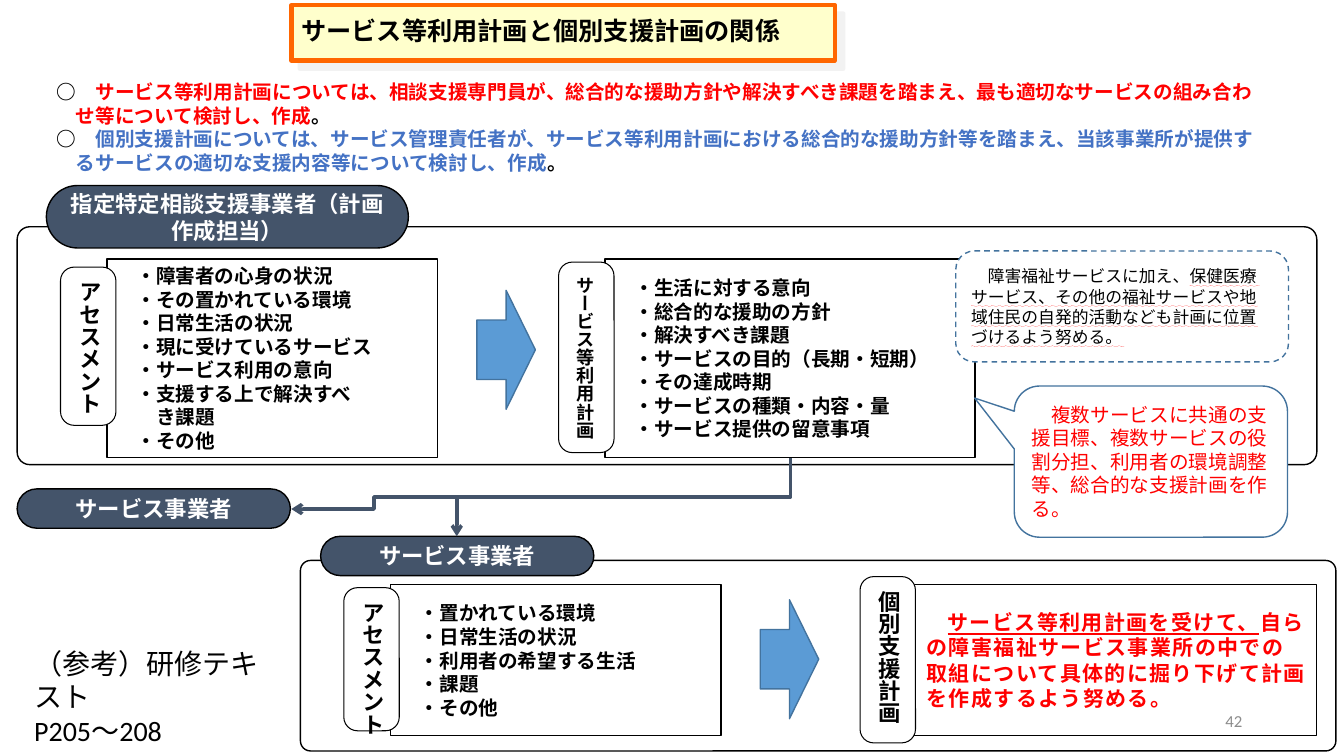
from pptx import Presentation, util as u
from pptx.dml.color import RGBColor
from pptx.enum import shapes, text, dml
from pptx.oxml import parse_xml, ns

# Theme
INK = dict(black="000000", white="FFFFFF", red="FF0000", blue="4472C4",
           navy="44546A", sky="5B9BD5", edge="43739E", cream="FFFFCC",
           orange="FF6600", gray="8C8C8C", shade="E7E6E6")
SIZE = dict(title=18, head=16, tab=16, slim=13, list=14, goal=15, memo=12, ref=20)
BODY, TOP, SIDE = "Calibri", "Arial", "Noto Sans CJK JP"
EM = SIZE["list"] / 72

# Content
TITLE = "サービス等利用計画と個別支援計画の関係"
INTRO = [
    ("サービス等利用計画については、相談支援専門員が、総合的な援助方針や解決すべき課題を踏まえ、"
     "最も適切なサービスの組み合わせ等について検討し、作成", "red"),
    ("個別支援計画については、サービス管理責任者が、サービス等利用計画における総合的な援助方針等を踏まえ、"
     "当該事業所が提供するサービスの適切な支援内容等について検討し、作成", "blue"),
]
NEEDS = ["・障害者の心身の状況", "・その置かれている環境", "・日常生活の状況", "・現に受けているサービス",
         "・サービス利用の意向", "・支援する上で解決すべ", "き課題", "・その他"]
PLAN = ["・生活に対する意向", "・総合的な援助の方針", "・解決すべき課題", "・サービスの目的（長期・短期）",
        "・その達成時期", "・サービスの種類・内容・量", "・サービス提供の留意事項"]
LOCAL = ["・置かれている環境", "・日常生活の状況", "・利用者の希望する生活", "・課題", "・その他"]
GOAL = ("サービス等利用計画を受けて、",
        "自らの障害福祉サービス事業所の中での取組について具体的に掘り下げて計画を作成するよう努める。")
MEMO = ("　障害福祉サービスに加え、",
        "保健医療サービス、その他の福祉サービスや地域住民の自発的活動なども計画に位置づけるよう努める。")
SHARE = "複数サービスに共通の支援目標、複数サービスの役割分担、利用者の環境調整等、総合的な支援計画を作る。"
REF = ["（参考）研修テキスト", "P205～208"]

# Grid: (top, height) of the two rows of boxes; (left, width) of panels
ROWS = dict(upper=(2.57, 1.97), lower=(5.8, 1.5))
PANELS = [(0.17, 2.25, 12.89, 2.36), (2.98, 5.56, 10.27, 1.89)]
HEADS = [((0.46, 1.84, 3.59, 0.62), "指定特定相談支援事業者（計画作成担当）"),
         ((3.18, 5.32, 2.71, 0.39), "サービス事業者"),
         ((0.17, 4.85, 2.71, 0.39), "サービス事業者")]
ARROWS = [(4.73, 2.88), (7.54, 5.95)]
# row, box left, box width, list, label, label size, label top, label height
CARDS = [("upper", 1.06, 3.28, NEEDS, "アセスメント", "tab", 2.65, 1.57),
         ("upper", 6.0, 3.67, PLAN, "サービス等利用計画", "slim", 2.6, 1.89),
         ("lower", 3.87, 3.28, LOCAL, "アセスメント", "tab", 5.83, 1.42),
         ("lower", 8.99, 4.07, None, "個別支援計画", "tab", 5.72, 1.65)]
TAB, LAP = 0.55, 0.46
LINKS = [((7.84, 4.54), (4.53, 5.32), True), ((4.53, 4.93), (2.89, 5.05), False)]

deck = Presentation()
deck.slide_width, deck.slide_height = u.Inches(13.33), u.Inches(7.5)
page = deck.slides.add_slide(deck.slide_layouts[6])
KIND = shapes.MSO_SHAPE


def rgb(name):
    return RGBColor.from_string(INK[name])


def put(item, vals):
    for key, val in vals.items():
        setattr(item, key, val)


def shape(kind, at, fill=None, line="black", width=1.0, adj=()):
    part = page.shapes.add_shape(kind, *[u.Inches(v) for v in at])
    part.shadow.inherit = False
    if fill:
        part.fill.solid()
        part.fill.fore_color.rgb = rgb(fill)
    else:
        part.fill.background()
    if line:
        part.line.color.rgb = rgb(line)
        part.line.width = u.Pt(width)
    else:
        part.line.fill.background()
    for i, val in enumerate(adj):
        part.adjustments[i] = val
    return part


def write(part, paras, size, font=BODY, bold=False, align="LEFT", anchor="MIDDLE", **frame):
    """Each paragraph is a list of (words, colour, font values)."""
    box = part.text_frame
    put(box, dict(word_wrap=True, vertical_anchor=getattr(text.MSO_ANCHOR, anchor)))
    put(box, frame)
    for i, runs in enumerate(paras):
        para = box.add_paragraph() if i else box.paragraphs[0]
        para.alignment = getattr(text.PP_ALIGN, align)
        for words, color, vals in runs:
            run = para.add_run()
            run.text = words
            put(run.font, dict(size=u.Pt(SIZE[size]), name=font, bold=bold))
            put(run.font, vals)
            run.font.color.rgb = rgb(color)
    return box


def indent(para, left, first=0):
    props = para._p.get_or_add_pPr()
    props.set("marL", str(u.Inches(left)))
    props.set("indent", str(u.Inches(first)))


def link(start, end, down):
    """Elbow arrow; when down, it leaves vertically, so it is turned by 90 degrees."""
    (x1, y1), (x2, y2) = start, end
    if down:
        cx, cy, w, h = (x1 + x2) / 2, (y1 + y2) / 2, y2 - y1, x1 - x2
        x1, y1, x2, y2 = cx - w / 2, cy - h / 2, cx + w / 2, cy + h / 2
    wire = page.shapes.add_connector(shapes.MSO_CONNECTOR.ELBOW,
                                     *[u.Inches(v) for v in (x1, y1, x2, y2)])
    put(wire.line, dict(width=u.Pt(2.5)))
    wire.line.color.rgb = rgb("navy")
    props = wire._element.spPr
    if down:
        props.xfrm.set("rot", "5400000")
    props.ln.append(parse_xml(f'<a:tailEnd {ns.nsdecls("a")} type="arrow"/>'))
    props.append(parse_xml(f'<a:effectLst {ns.nsdecls("a")}/>'))


# Title with its offset shadow
head = shape(KIND.RECTANGLE, (2.89, 0.05, 5.39, 0.55), "cream", "orange", 3)
write(head, [[(TITLE, "black", {})]], "title", TOP, True).paragraphs[0].line_spacing = 0.9
head._element.spPr.find(ns.qn("a:effectLst")).append(parse_xml(
    f'<a:outerShdw {ns.nsdecls("a")} dist="107950" dir="2700000" algn="ctr" rotWithShape="0">'
    f'<a:srgbClr val="{INK["shade"]}"><a:alpha val="50000"/></a:srgbClr></a:outerShdw>'))

# Panels, headings and block arrows
for at in PANELS:
    shape(KIND.ROUNDED_RECTANGLE, at, adj=[0.053])
for at, words in HEADS:
    pill = shape(KIND.ROUNDED_RECTANGLE, at, "navy", adj=[0.5])
    write(pill, [[(words, "white", {})]], "head", bold=True, align="CENTER")
for x, y in ARROWS:
    shape(KIND.RIGHT_ARROW, (x, y, 0.58, 1.18), "sky", "edge")
for ends in LINKS:
    link(*ends)

# Boxes with their upright labels
for row, x, w, items, label, size, y, h in CARDS:
    top, high = ROWS[row]
    box = shape(KIND.RECTANGLE, (x, top, w, high))
    if items:
        frame = write(box, [[("　" + s, "black", {})] for s in items], "list", bold=True)
        for para, words in zip(frame.paragraphs, items):
            if not words.startswith("・"):
                indent(para, EM)
    else:
        frame = write(box, [[("　", "red", {}), (GOAL[0], "red", dict(underline=True)),
                             (GOAL[1], "red", {})]], "goal", bold=True,
                      margin_left=u.Inches(0.2))
        for run in frame.paragraphs[0].runs[1:]:
            run.font._element.set("spc", "100")
    tab = shape(KIND.ROUNDED_RECTANGLE, (x - LAP, y, TAB, h), "white", width=0.75, adj=[0.247])
    frame = write(tab, [[(label, "black", {})]], size, SIDE, True, "CENTER", word_wrap=False,
                  margin_left=u.Inches(0.04), margin_right=u.Inches(0.04))
    frame.paragraphs[0].line_spacing = u.Pt(17)
    frame._txBody.bodyPr.set("vert", "eaVert")
    props = frame.paragraphs[0].runs[0].font._element
    props.append(parse_xml(f'<a:ea {ns.nsdecls("a")} typeface="{SIDE}"/>'))

# Dashed note and speech bubble
note = shape(KIND.ROUNDED_RECTANGLE, (9.48, 2.49, 3.3, 1.1), "white", "edge")
note.line.dash_style = dml.MSO_LINE.DASH
wave = dict(underline=text.MSO_UNDERLINE.WAVY_LINE)
frame = write(note, [[(MEMO[0], "black", {}), (MEMO[1], "black", wave)]], "memo")
frame.paragraphs[0].runs[1].font._element.find(ns.qn("a:solidFill")).addnext(parse_xml(
    f'<a:uFill {ns.nsdecls("a")}><a:solidFill><a:srgbClr val="{INK["red"]}"/></a:solidFill></a:uFill>'))
talk = shape(KIND.ROUNDED_RECTANGULAR_CALLOUT, (10.06, 3.83, 2.71, 1.5), "white", "edge",
             adj=[-0.645, -0.42, 0.167])
write(talk, [[("　" + SHARE, "red", {})]], "list")

# Introduction
intro = shape(KIND.RECTANGLE, (0.46, 0.75, 12.21, 1.02), line=None)
frame = write(intro, [[("○　", "black", {}), (words, color, {}), ("。", "black", {})]
                      for words, color in INTRO], "list", bold=True)
for para in frame.paragraphs:
    indent(para, EM, -EM)

# Page number and reference
for at, lines, size, color, align, anchor in [
        ((9.42, 6.95, 3, 0.4), ["42"], "memo", "gray", "RIGHT", "MIDDLE"),
        ((0.24, 6.36, 2.58, 0.77), REF, "ref", "black", "LEFT", "TOP")]:
    box = page.shapes.add_textbox(*[u.Inches(v) for v in at])
    write(box, [[(s, color, {})] for s in lines], size, align=align, anchor=anchor)

deck.save("out.pptx")
